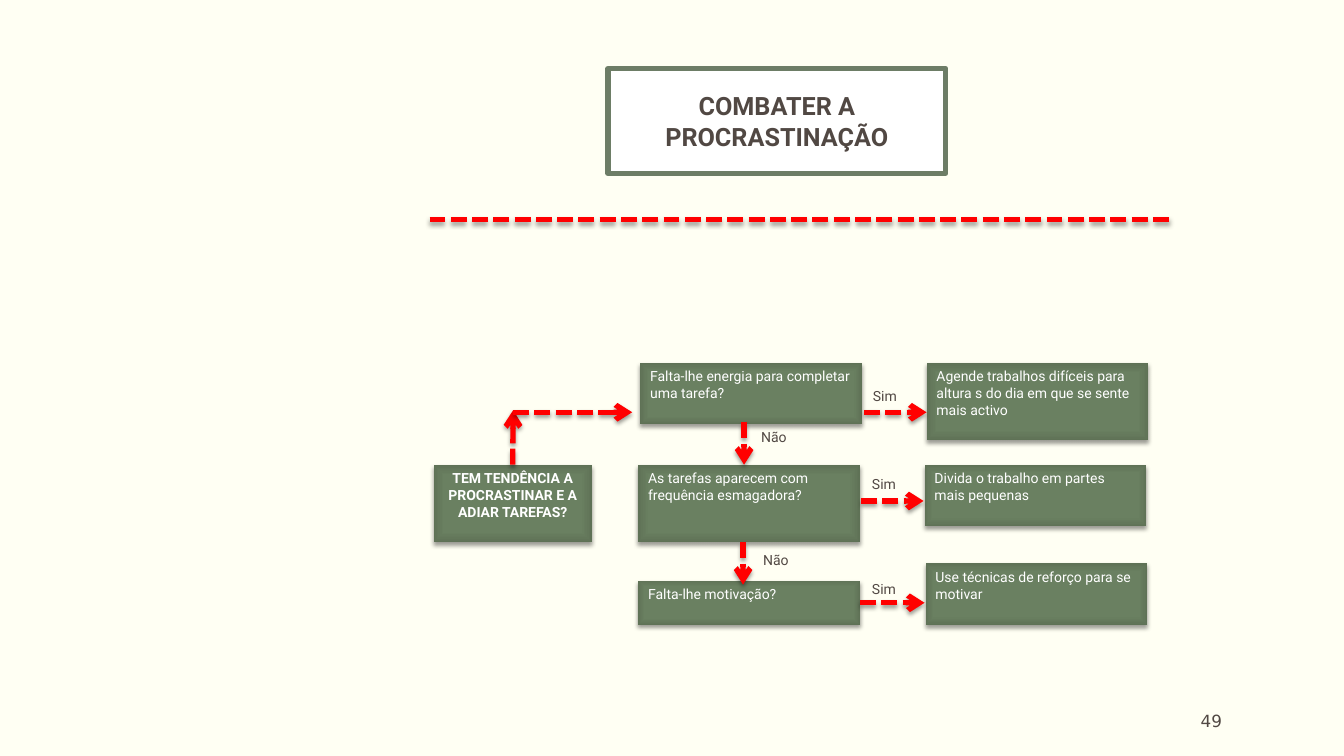
from lxml import etree
from pptx import Presentation
from pptx.dml.color import RGBColor
from pptx.enum.dml import MSO_LINE
from pptx.enum.shapes import MSO_CONNECTOR, MSO_SHAPE
from pptx.enum.text import MSO_ANCHOR, PP_ALIGN
from pptx.oxml import parse_xml
from pptx.oxml.ns import nsdecls, qn
from pptx.util import Inches, Pt

RECT = MSO_SHAPE.RECTANGLE
STRAIGHT = MSO_CONNECTOR.STRAIGHT
SYS_DASH = MSO_LINE.SQUARE_DOT
LEFT, CENTER, RIGHT = PP_ALIGN.LEFT, PP_ALIGN.CENTER, PP_ALIGN.RIGHT
TOP, MIDDLE = MSO_ANCHOR.TOP, MSO_ANCHOR.MIDDLE
SIDE_TOP, SIDE_RIGHT = 0, 3

COLORS = {
    "background": "FFFFF3", "text": "514843", "white": "FFFFFF",
    "frame": "6D7D66", "arrow": "FF0000", "shadow": "000000",
    "green": "6B8162", "green_mid": "6A8061", "green_edge": "5F7256",
}


def rgb(name):
    return RGBColor.from_string(COLORS[name])


class FlowSlide:
    """Style and drawing methods for the current slide."""

    font = "Roboto"
    line_width = Pt(3.8)

    def __init__(self, prs):
        self.slide = prs.slides.add_slide(prs.slide_layouts[5])
        fill = self.slide.background.fill
        fill.solid()
        fill.fore_color.rgb = rgb("background")

    def set_text(self, s, text, size=10, color="text", bold=False,
                 align=LEFT, anchor=TOP, font=None):
        tf = s.text_frame
        tf.text = text
        tf.word_wrap = True
        tf.vertical_anchor = anchor
        p = tf.paragraphs[0]
        p.alignment = align
        r = p.runs[0]
        r.font.name = font or self.font
        r.font.size = Pt(size)
        r.font.bold = bold
        r.font.color.rgb = rgb(color)

    def drop_shadow(self, s):
        old = s._element.spPr.find(qn("a:effectLst"))
        if old is not None:
            s._element.spPr.remove(old)
        s._element.spPr.append(parse_xml(
            f'<a:effectLst {nsdecls("a")}>'
            f'<a:outerShdw blurRad="{Pt(3.1)}" dist="{Pt(2)}" dir="5400000" rotWithShape="0">'
            f'<a:srgbClr val="{COLORS["shadow"]}"><a:alpha val="38000"/></a:srgbClr>'
            '</a:outerShdw></a:effectLst>'))

    def gradient(self, s):
        s.fill.background()
        stops = "".join(
            f'<a:gs pos="{pos * 1000}"><a:srgbClr val="{COLORS[name]}"/></a:gs>'
            for pos, name in ((0, "green"), (71, "green_mid"), (100, "green_edge")))
        spPr = s._element.spPr
        spPr.replace(spPr.find(qn("a:noFill")), parse_xml(
            f'<a:gradFill {nsdecls("a")} rotWithShape="1"><a:gsLst>{stops}</a:gsLst>'
            '<a:path path="rect"><a:fillToRect l="50000" t="50000" r="50000" b="50000"/>'
            '</a:path></a:gradFill>'))

    def title(self, text, x, y, w, h):
        s = self.slide.shapes.title
        s.left, s.top, s.width, s.height = map(Inches, (x, y, w, h))
        s.fill.solid()
        s.fill.fore_color.rgb = rgb("white")
        s.line.color.rgb = rgb("frame")
        s.line.width = self.line_width
        self.set_text(s, text, 18, bold=True, align=CENTER, anchor=MIDDLE)

    def box(self, text, x, y, w, h, **style):
        s = self.slide.shapes.add_shape(RECT, *map(Inches, (x, y, w, h)))
        s.shadow.inherit = False
        self.gradient(s)
        s.line.fill.background()
        self.drop_shadow(s)
        self.set_text(s, text, color="white", **style)
        return s

    def label(self, text, x, y, w=0.48, h=0.27, **style):
        s = self.slide.shapes.add_textbox(*map(Inches, (x, y, w, h)))
        self.set_text(s, text, **style)
        return s

    def line(self, x1, y1, x2, y2, arrow=True, start=None):
        s = self.slide.shapes.add_connector(STRAIGHT, *map(Inches, (x1, y1, x2, y2)))
        if start:
            s.begin_connect(*start)
        s.line.color.rgb = rgb("arrow")
        s.line.width = self.line_width
        s.line.dash_style = SYS_DASH
        if arrow:
            ln = s._element.spPr.find(qn("a:ln"))
            etree.SubElement(ln, qn("a:tailEnd"), type="arrow")
        self.drop_shadow(s)


def main():
    prs = Presentation()
    prs.slide_width, prs.slide_height = Inches(13.33), Inches(7.5)
    page = FlowSlide(prs)

    # Heading, divider and page number
    page.title("COMBATER A PROCRASTINAÇÃO", 6.03, 0.68, 3.35, 1.04)
    page.line(4.26, 2.18, 11.63, 2.18, arrow=False)
    number = page.label("49", 10.12, 6.95, 2, 0.4, size=12, align=RIGHT,
                        anchor=MIDDLE, font="DejaVu Sans")
    number.text_frame.margin_left = number.text_frame.margin_right = 0

    # Starting question
    start = page.box("TEM TENDÊNCIA A PROCRASTINAR E A ADIAR TAREFAS?",
                     4.3, 4.61, 1.57, 0.77, bold=True, align=CENTER)

    # Questions and advice
    col_w = 2.2
    page.box("Falta-lhe energia para completar uma tarefa?", 6.35, 3.6, col_w, 0.61)
    page.box("As tarefas aparecem com frequência esmagadora?", 6.33, 4.61, col_w, 0.77)
    motivation = page.box("Falta-lhe motivação?", 6.33, 5.76, col_w, 0.44)
    for text, x, y, h in (
        ("Agende trabalhos difíceis para altura s do dia em que se sente mais activo",
         9.19, 3.6, 0.77),
        ("Divida o trabalho em partes mais pequenas", 9.17, 4.61, 0.61),
        ("Use técnicas de reforço para se motivar", 9.18, 5.59, 0.61),
    ):
        page.box(text, x, y, col_w, h)

    # Path from the start to the first question
    page.line(5.09, 4.61, 5.09, 4.07, start=(start, SIDE_TOP))
    page.line(5.09, 4.09, 6.27, 4.09)

    # "Sim" branches
    for x, y, label_x, label_y, joined in (
        (8.57, 4.09, 8.56, 3.8, None),
        (8.54, 4.97, 8.55, 4.67, None),
        (8.55, 5.98, 8.55, 5.71, (motivation, SIDE_RIGHT)),
    ):
        page.line(x, y, x + 0.62, y, start=joined)
        page.label("Sim", label_x, label_y)

    # "Não" branches
    for x, y, label_x, label_y in ((7.38, 4.19, 7.45, 4.2), (7.37, 5.38, 7.47, 5.42)):
        page.line(x, y, x, y + 0.42)
        page.label("Não", label_x, label_y)

    prs.save("out.pptx")


if __name__ == "__main__":
    main()
